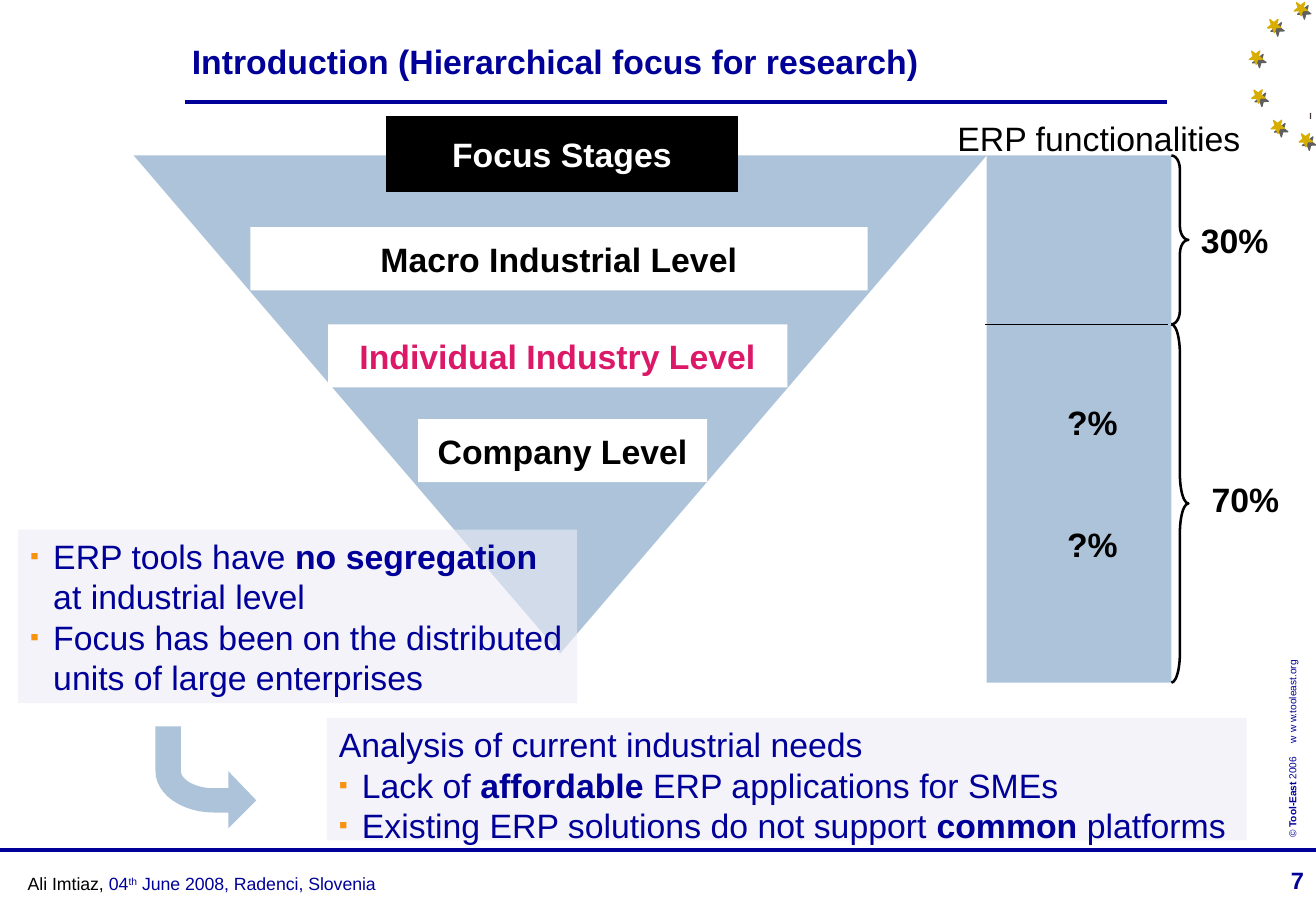
import pptx
import pptx.util
import pptx.dml.color
import pptx.enum.shapes
import pptx.enum.text
import pptx.oxml
import pptx.oxml.ns
from lxml import etree

Inches = pptx.util.Inches
SHAPE = pptx.enum.shapes.MSO_SHAPE
ALIGN = pptx.enum.text.PP_ALIGN
ANCHOR = pptx.enum.text.MSO_ANCHOR
NS = pptx.oxml.ns.nsdecls("a")

THEME = {
    "font": "Arial", "navy": "000099", "black": "000000", "white": "FFFFFF",
    "blue": "ADC3D9", "panel": "EBEBF5", "pink": "DC1969", "orange": "F69310",
    "gold": "D6AD00", "gray": "5F5F5F", "dark": "423A3A",
    "body": 20, "number": 14, "footer": 10.5, "copyright": 6,
}

prs = pptx.Presentation()
prs.slide_width = Inches(10.83)
prs.slide_height = Inches(7.5)
s = prs.slides.add_slide(prs.slide_layouts[6])


def write(paras, box=None, sp=None, size="body", color="black", bold=False,
          align=ALIGN.LEFT, anchor=ANCHOR.TOP, wrap=True, spacing=None,
          bullets=(), tab=None):
    sp = sp or s.shapes.add_textbox(*map(Inches, box))
    tf = sp.text_frame
    tf.word_wrap = wrap
    tf.vertical_anchor = anchor
    for i, runs in enumerate([[paras]] if isinstance(paras, str) else paras):
        p = tf.paragraphs[0] if i == 0 else tf.add_paragraph()
        p.alignment = align
        p.line_spacing = spacing
        pPr = p._p.get_or_add_pPr()
        if bullets:
            pPr.set("marL", str(Inches(0.19)))
            pPr.set("indent", str(-Inches(0.19)))
        if bullets and bullets[i]:
            for xml in (
                f'<a:buClr {NS}><a:srgbClr val="{THEME["orange"]}"/></a:buClr>',
                f'<a:buSzPct {NS} val="75000"/>',
                f'<a:buFont {NS} typeface="{THEME["font"]}"/>',
                f'<a:buChar {NS} char="▪"/>',
            ):
                pPr.append(pptx.oxml.parse_xml(xml))
        if tab:
            pPr.append(pptx.oxml.parse_xml(
                f'<a:tabLst {NS}><a:tab pos="{Inches(tab)}" algn="l"/></a:tabLst>'))
        for run in runs:
            if run == "\n":
                p.add_line_break()
                continue
            words, fmt = (run, {}) if isinstance(run, str) else run
            r = p.add_run()
            r.text = words
            r.font.name = THEME["font"]
            r.font.size = pptx.util.Pt(THEME[size])
            r.font.bold = fmt.get("bold", bold)
            r.font.color.rgb = pptx.dml.color.RGBColor.from_string(
                THEME[fmt.get("color", color)])
            if "baseline" in fmt:
                r._r.get_or_add_rPr().set("baseline", fmt["baseline"])
    return sp


def draw(kind, box=None, fill=None, line=None, width=0.75, points=None):
    if kind == "line":
        x1, y1, x2, y2 = map(Inches, box)
        sp = s.shapes.add_connector(
            pptx.enum.shapes.MSO_CONNECTOR.STRAIGHT, x1, y1, x2, y2)
        etree.SubElement(sp._element.spPr, pptx.oxml.ns.qn("a:effectLst"))
    else:
        if kind == "free":
            corners = [(Inches(x), Inches(y)) for x, y in points]
            fb = s.shapes.build_freeform(*corners[0])
            fb.add_line_segments(corners[1:], close=True)
            sp = fb.convert_to_shape()
        else:
            sp = s.shapes.add_shape(kind, *map(Inches, box))
        sp.shadow.inherit = False
        if fill:
            sp.fill.solid()
            sp.fill.fore_color.rgb = pptx.dml.color.RGBColor.from_string(THEME[fill])
        else:
            sp.fill.background()
    if line:
        sp.line.color.rgb = pptx.dml.color.RGBColor.from_string(THEME[line])
        sp.line.width = pptx.util.Pt(width)
    else:
        sp.line.fill.background()
    return sp


sp = write([["© ", ("Tool-East", {"bold": True}), " 2006\tw w w.tooleast.org"]],
           (9.46, 5.72, 2.35, 0.2), size="copyright", color="navy", tab=0.78)
sp.rotation = 270
draw("line", (0, 7, 10.83, 7), line="navy", width=2.25)
write("7", (8.75, 7.08, 2.08, 0.33), size="number", color="navy", bold=True,
      align=ALIGN.RIGHT)
draw("line", (1.52, 0.84, 9.6, 0.84), line="navy", width=2.25)

draw(SHAPE.RECTANGLE, (10.78, 0.93, 0.01, 0.05), "dark")
for x, y in [(10.69, 1.1), (10.3, 0.74), (10.46, 0.99),
             (10.28, 0.42), (10.65, 0.02), (10.43, 0.16)]:
    sp = draw(SHAPE.STAR_5_POINT, (x, y, 0.11, 0.11), "gold", "gold")
    sp.rotation = 177.9
    effects = sp._element.spPr.find(pptx.oxml.ns.qn("a:effectLst"))
    effects.append(pptx.oxml.parse_xml(
        f'<a:outerShdw {NS} dist="35560" dir="2700000" algn="ctr" rotWithShape="0">'
        f'<a:srgbClr val="{THEME["gray"]}"/></a:outerShdw>'))

write("Introduction (Hierarchical focus for research)", (1.48, 0.29, 6.38, 0.51),
      color="navy", bold=True)

draw("free", fill="blue", points=[(4.61, 5.38), (1.1, 1.28), (8.12, 1.28)])
for label, box, fill, color in [
    ("Macro Industrial Level", (2.06, 1.87, 5.08, 0.52), "white", "black"),
    ("Individual Industry Level", (2.7, 2.67, 3.78, 0.52), "white", "pink"),
    ("Company Level", (3.44, 3.45, 2.38, 0.52), "white", "black"),
    ("Focus Stages", (3.18, 0.96, 2.89, 0.62), "black", "white"),
]:
    outline = "black" if fill == "black" else None
    write(label, sp=draw(SHAPE.RECTANGLE, box, fill, outline), color=color,
          bold=True, align=ALIGN.CENTER, anchor=ANCHOR.MIDDLE)

for top, height, curl in [(1.28, 1.39, 0.811), (2.67, 2.95, 1.727)]:
    draw(SHAPE.RECTANGLE, (8.12, top, 1.52, height), "blue")
    brace = draw(SHAPE.RIGHT_BRACE, (9.64, top, 0.14, height), line="black", width=1.5)
    brace.adjustments[0] = curl
draw("line", (9.61, 2.67, 8.11, 2.67), line="black")
for share, x, y in [("30%", 9.69, 1.76), ("70%", 9.78, 3.89),
                    ("?%", 8.52, 3.26), ("?%", 8.52, 4.26)]:
    write(share, (x, y, 0.94, 0.43), bold=True, align=ALIGN.CENTER)
write("ERP functionalities", (7.78, 0.77, 2.53, 0.58), align=ALIGN.CENTER,
      wrap=False, spacing=1.45)

strong = {"bold": True}
needs = [
    ["Analysis of current industrial needs"],
    ["Lack of ", ("affordable", strong), " ERP applications for SMEs"],
    ["Existing ERP solutions do not support ", ("common", strong), " platforms"],
]
tools = [
    ["ERP tools have ", ("no segregation", strong), "\n", "at industrial level"],
    ["Focus has been on the distributed units of large enterprises"],
]
for paras, box, bullets in [
    (needs, (2.69, 5.91, 7.57, 1.01), (False, True, True)),
    (tools, (0.15, 4.36, 4.6, 1.43), (True, True)),
]:
    sp = draw(SHAPE.RECTANGLE, box, "panel")
    tint = sp._element.spPr.find(".//" + pptx.oxml.ns.qn("a:srgbClr"))
    etree.SubElement(tint, pptx.oxml.ns.qn("a:alpha"), val="60000")
    write(paras, sp=sp, color="navy", bullets=bullets)

curves = []
for a, b, c, d in [
    ((1.76, 6.69), (1.5, 6.69), (1.28, 6.54), (1.28, 6.35)),
    ((1.49, 6.35), (1.49, 6.42), (1.61, 6.49), (1.76, 6.49)),
]:
    curves.append([
        tuple((1 - t) ** 3 * a[k] + 3 * (1 - t) ** 2 * t * b[k]
              + 3 * (1 - t) * t ** 2 * c[k] + t ** 3 * d[k] for k in (0, 1))
        for t in [i / 12 for i in range(13)]])
outer, inner = curves
draw("free", fill="blue", points=[
    (2.11, 6.59), (1.88, 6.82), (1.88, 6.69), *outer, (1.28, 5.98),
    (1.49, 5.98), *inner, (1.88, 6.49), (1.88, 6.35)])

write([[("Ali Imtiaz, ", {"color": "black"}), "04", ("th", {"baseline": "30000"}),
        " June 2008, Radenci, Slovenia"]],
      (0.13, 7.14, 3.23, 0.28), size="footer", color="navy")

prs.save("out.pptx")
